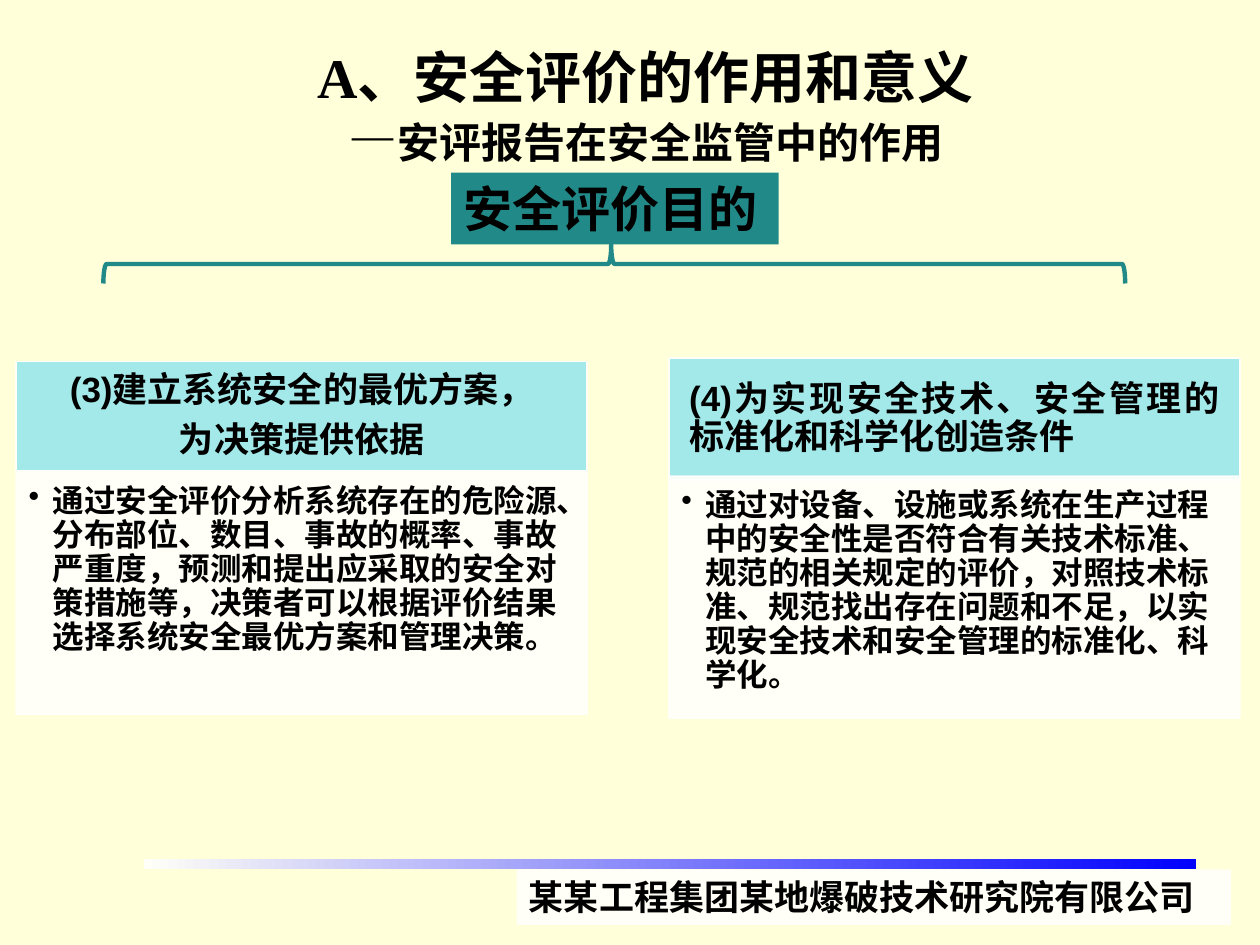
from dataclasses import dataclass

from lxml import etree
from pptx import Presentation
from pptx.dml.color import RGBColor
from pptx.enum import shapes as kinds, text as txt
from pptx.oxml.ns import qn
from pptx.util import Inches, Pt


@dataclass(frozen=True)
class Theme:
    page: str = "FFFFD9"
    ink: str = "000000"
    teal: str = "228989"
    aqua: str = "A4E9E9"
    pale: str = "FFFFF7"
    white: str = "FFFFFC"
    blue: str = "0000FF"
    sans: str = "Arial"
    serif: str = "Times New Roman"
    cjk: str = "Noto Sans CJK SC"
    title: int = 32
    dash: int = 28
    sub: int = 24
    goal: int = 28
    head: int = 20
    body: int = 18
    foot: int = 20


theme = Theme()
color = RGBColor.from_string


def add_box(left, top, width, height, fill=None, line=None, kind="RECTANGLE"):
    box = slide.shapes.add_shape(
        kinds.MSO_SHAPE[kind],
        Inches(left), Inches(top), Inches(width), Inches(height))
    box.shadow.inherit = False
    if fill:
        box.fill.solid()
        box.fill.fore_color.rgb = color(fill)
    else:
        box.fill.background()
    if line:
        box.line.color.rgb = color(line)
        box.line.width = Pt(1)
    else:
        box.line.fill.background()
    return box


def write(box, lines, size, font, align, anchor, pads=(0.1, 0.05, 0.1, 0.05),
          gap=0, lead=1.0, bullet=False):
    frame = box.text_frame
    frame.word_wrap = True
    frame.vertical_anchor = anchor
    (frame.margin_left, frame.margin_top,
     frame.margin_right, frame.margin_bottom) = map(Inches, pads)
    for i, line in enumerate(lines):
        para = frame.paragraphs[0] if i == 0 else frame.add_paragraph()
        para.text = line
        para.alignment = align
        para.line_spacing = lead
        para.space_after = Pt(gap)
        if bullet:
            props = para._p.get_or_add_pPr()
            props.set("marL", str(Inches(0.19)))
            props.set("indent", str(-Inches(0.19)))
            etree.SubElement(props, qn("a:buChar")).set("char", "•")
        para.font.size = Pt(size)
        para.font.name = font
        para.font.bold = True
        para.font.color.rgb = color(theme.ink)


# Page
deck = Presentation()
deck.slide_width, deck.slide_height = Inches(10), Inches(7.5)
slide = deck.slides.add_slide(deck.slide_layouts[5])
slide.background.fill.solid()
slide.background.fill.fore_color.rgb = color(theme.page)
align, anchor = txt.PP_ALIGN, txt.MSO_ANCHOR

# Fading rule above the footer
rule = add_box(1.14, 6.82, 8.35, 0.08)
rule.fill.gradient()
rule.fill.gradient_angle = 0
for stop, tint, spot in zip(rule.fill.gradient_stops,
                            (theme.pale, theme.blue), (0, 1)):
    stop.color.rgb = color(tint)
    stop.position = spot

# Two cards: heading over a bulleted text
cards = [
    (0.13, 2.87, 0.87, 3.75, align.CENTER,
     ["(3)建立系统安全的最优方案，", "为决策提供依据"],
     "通过安全评价分析系统存在的危险源、分布部位、数目、事故的概率、事故"
     "严重度，预测和提出应采取的安全对策措施等，决策者可以根据评价结果"
     "选择系统安全最优方案和管理决策。"),
    (5.31, 2.84, 0.97, 3.78, align.JUSTIFY,
     ["(4)为实现安全技术、安全管理的标准化和科学化创造条件"],
     "通过对设备、设施或系统在生产过程中的安全性是否符合有关技术标准、"
     "规范的相关规定的评价，对照技术标准、规范找出存在问题和不足，以实"
     "现安全技术和安全管理的标准化、科学化。"),
]
for left, top, height, low, side, heads, body in cards:
    head = add_box(left, top, 4.53, height, theme.aqua, theme.pale)
    write(head, heads, theme.head, theme.sans, side, anchor.MIDDLE,
          (0.16, 0.09, 0.16, 0.09), gap=7, lead=0.9)
    panel = add_box(left, low, 4.53, 1.92, theme.white, theme.white)
    for tint in panel._element.spPr.iter(qn("a:srgbClr")):
        etree.SubElement(tint, qn("a:alpha")).set("val", "90000")
    write(panel, [body], theme.body, theme.sans, align.LEFT, anchor.TOP,
          (0.1, 0.1, 0.14, 0.16), gap=3, lead=0.9, bullet=True)

# Brace from the goal down to the cards
brace = add_box(4.72, -1.96, 0.31, 8.11, line=theme.teal, kind="LEFT_BRACE")
brace.rotation = 90
brace.line.width = Pt(2.5)
brace.adjustments[0], brace.adjustments[1] = 0.083, 0.503

# Goal
goal = add_box(3.58, 1.37, 2.6, 0.57, theme.teal)
write(goal, ["安全评价目的"], theme.goal, theme.sans, align.LEFT, anchor.TOP)

# Title
title = slide.shapes.title
title.left, title.top = Inches(1.3), Inches(0.21)
title.width, title.height = Inches(7.65), Inches(1.25)
title.text_frame.vertical_anchor = anchor.MIDDLE
para = title.text_frame.paragraphs[0]
para.alignment = align.CENTER
para.font.bold = True
para.font.color.rgb = color(theme.ink)
for words, size, font in [
        ("A、", theme.title, theme.serif),
        ("安全评价的作用和意义", theme.title, theme.sans),
        (None, theme.title, theme.sans),
        ("—", theme.dash, theme.serif),
        ("安评报告在安全监管中的作用", theme.sub, theme.sans)]:
    if words is None:
        para.add_line_break()
        continue
    run = para.add_run()
    run.text = words
    run.font.size = Pt(size)
    run.font.name = font

# Footer
foot = add_box(4.1, 6.9, 5.67, 0.44, theme.pale)
write(foot, ["某某工程集团某地爆破技术研究院有限公司"], theme.foot, theme.cjk,
      align.LEFT, anchor.TOP)

deck.save("out.pptx")
